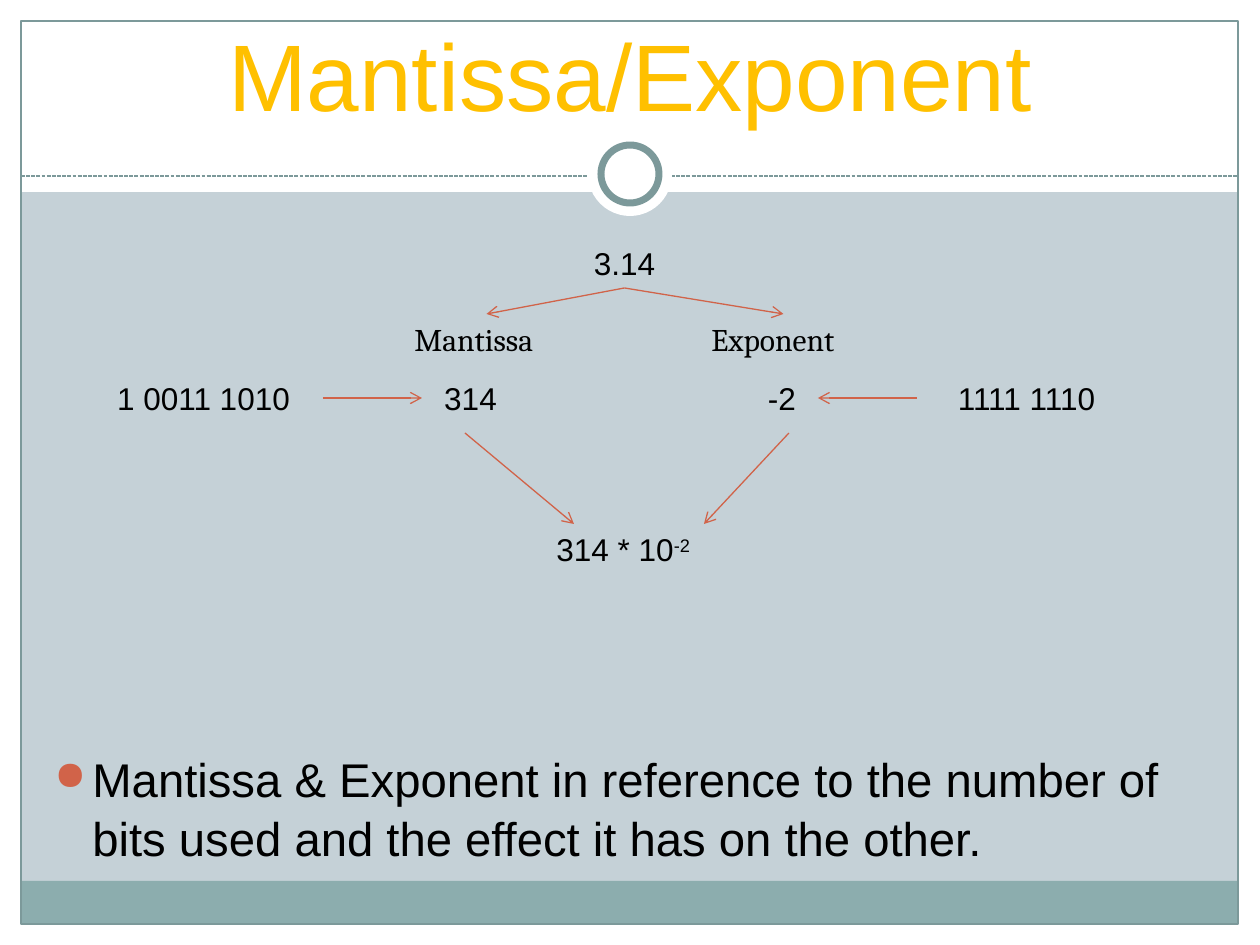
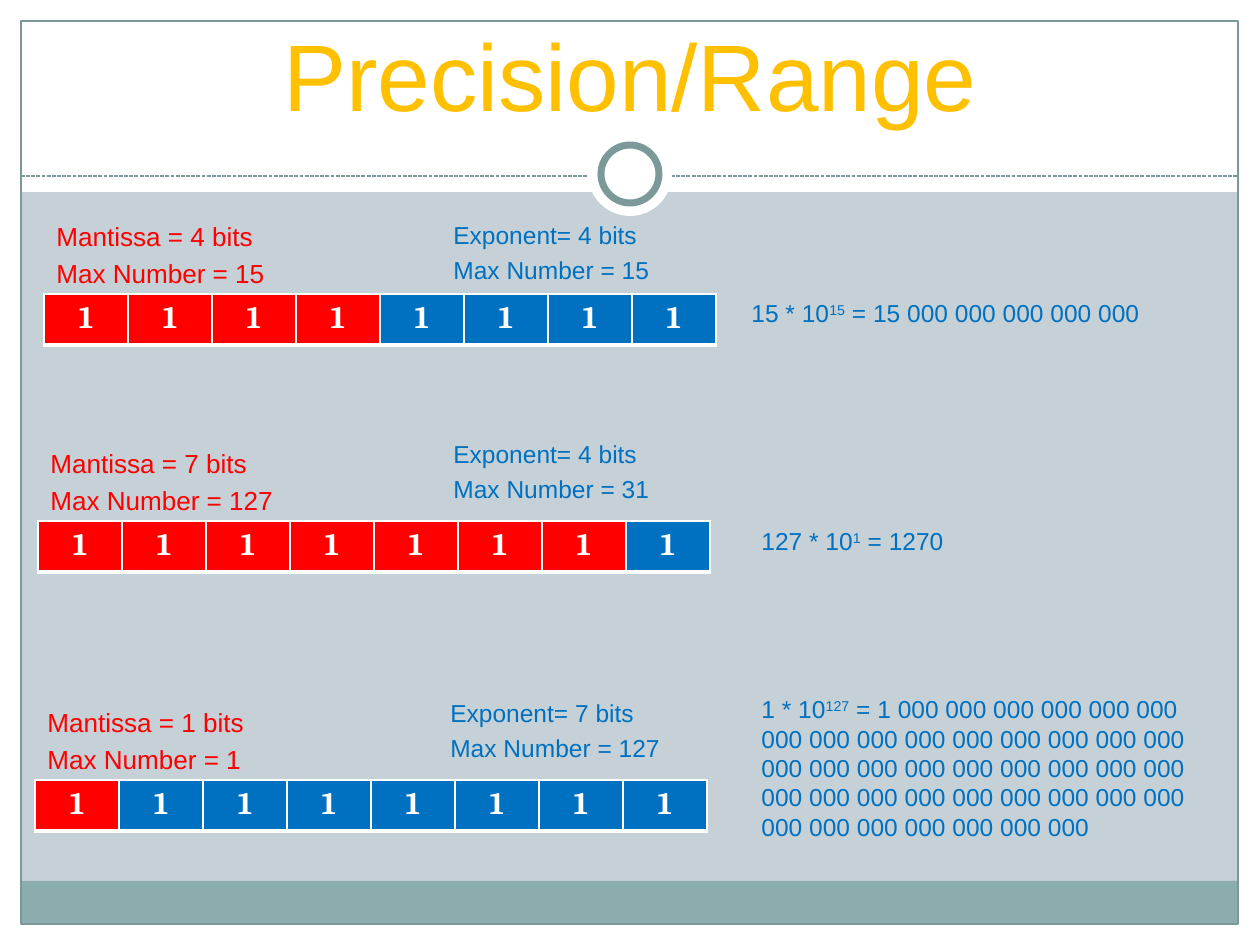
from lxml.etree import SubElement
from pptx import Presentation
from pptx.dml.color import RGBColor
from pptx.enum.dml import MSO_LINE
from pptx.enum.shapes import MSO_CONNECTOR, MSO_SHAPE
from pptx.enum.text import MSO_ANCHOR, MSO_AUTO_SIZE, PP_ALIGN
from pptx.oxml.ns import qn
from pptx.util import Pt

EMU_PER_PX = 7257  # 126 px to the inch

WHITE = RGBColor(0xFF, 0xFF, 0xFF)
BLACK = RGBColor(0, 0, 0)
BACKGROUND = RGBColor(0xC5, 0xD1, 0xD7)
FOOTER_TEAL = RGBColor(0x8C, 0xAD, 0xAE)
FRAME_TEAL = RGBColor(0x7C, 0x99, 0x9A)
TITLE_GOLD = RGBColor(0xFF, 0xC0, 0x00)
ACCENT = RGBColor(0xD1, 0x63, 0x49)
MANTISSA_RED = RGBColor(0xFF, 0, 0)
EXPONENT_BLUE = RGBColor(0, 0x70, 0xC0)

TOP, LEFT, BOTTOM, RIGHT = range(4)


def px(*lengths):
    return [length * EMU_PER_PX for length in lengths]


def set_text(frame, text, size=18, color=BLACK, font="Arial", bold=False,
             align=PP_ALIGN.LEFT, space_before=0):
    """Fill a text frame; each newline starts a paragraph, ^...^ is superscript."""
    frame.word_wrap = True
    for index, line in enumerate(text.split("\n")):
        paragraph = frame.add_paragraph() if index else frame.paragraphs[0]
        paragraph.alignment = align
        paragraph.space_before = Pt(space_before if index else 0)
        for part_index, part in enumerate(line.split("^")):
            if not part:
                continue
            run = paragraph.add_run()
            run.text = part
            run.font.name = font
            run.font.size = Pt(size)
            run.font.bold = bold
            run.font.color.rgb = color
            if part_index % 2:
                run._r.get_or_add_rPr().set("baseline", "30000")


presentation = Presentation()
presentation.slide_width, presentation.slide_height = px(1260, 945)
layout = presentation.slide_layouts[5]
layout.background.fill.solid()
layout.background.fill.fore_color.rgb = BACKGROUND

slides = []
for title_text in ("Mantissa/Exponent", "Precision/Range"):
    slide = presentation.slides.add_slide(layout)
    title = slide.shapes.title
    title.left, title.top, title.width, title.height = px(42, 32, 1176, 105)
    title.text_frame.vertical_anchor = MSO_ANCHOR.BOTTOM
    title.text_frame.auto_size = MSO_AUTO_SIZE.NONE
    set_text(title.text_frame, title_text, size=54, color=TITLE_GOLD, align=PP_ALIGN.CENTER)
    slides.append(slide)
diagram_slide, range_slide = slides

# Shared decoration: drawn once, then moved into the layout
decoration = []
for kind, box, fill, line_width in (
    (MSO_SHAPE.RECTANGLE, (0, 924, 1260, 21), WHITE, 0),
    (MSO_SHAPE.RECTANGLE, (0, 0, 1260, 192), WHITE, 0),
    (MSO_SHAPE.RECTANGLE, (0, 0, 21, 945), WHITE, 0),
    (MSO_SHAPE.RECTANGLE, (1239, 0, 21, 945), WHITE, 0),
    (MSO_SHAPE.RECTANGLE, (21, 881, 1217, 43), FOOTER_TEAL, 0),
    (MSO_SHAPE.RECTANGLE, (21, 21, 1217, 903), None, 0.75),
    (None, (21, 176, 1239, 176), None, 0.75),
    (MSO_SHAPE.OVAL, (588, 132, 84, 84), WHITE, 0),
    (MSO_SHAPE.OVAL, (601, 145, 58, 58), WHITE, 4),
):
    if kind is None:
        shape = diagram_slide.shapes.add_connector(MSO_CONNECTOR.STRAIGHT, *px(*box))
        shape.line.dash_style = MSO_LINE.SQUARE_DOT
    else:
        shape = diagram_slide.shapes.add_shape(kind, *px(*box))
        shape.shadow.inherit = False
        if fill is None:
            shape.fill.background()
        else:
            shape.fill.solid()
            shape.fill.fore_color.rgb = fill
    if line_width:
        shape.line.color.rgb = FRAME_TEAL
        shape.line.width = Pt(line_width)
    else:
        shape.line.fill.background()
    if kind is None:
        SubElement(shape.element.spPr, qn("a:effectLst"))
    decoration.append(shape)

layout_tree = layout.placeholders[0].element.getparent()
for shape in decoration:
    layout_tree.append(shape.element)

# Slide 1: how a number splits into mantissa and exponent
labels = {}
for name, text, left, top, width, font, align in (
    ("mantissa", "Mantissa", 402, 314, 169, "Cambria", PP_ALIGN.LEFT),
    ("exponent", "Exponent", 699, 314, 169, "Cambria", PP_ALIGN.LEFT),
    ("result", "314 * 10^-2^", 544, 524, 219, "Arial", PP_ALIGN.LEFT),
    ("number", "3.14", 515, 238, 219, "Arial", PP_ALIGN.CENTER),
    ("mantissa value", "314", 422, 373, 97, "Arial", PP_ALIGN.CENTER),
    ("exponent value", "-2", 746, 373, 72, "Arial", PP_ALIGN.CENTER),
    ("mantissa bits", "1 0011 1010", 84, 373, 239, "Arial", PP_ALIGN.CENTER),
    ("exponent bits", "1111 1110", 917, 373, 219, "Arial", PP_ALIGN.CENTER),
):
    labels[name] = diagram_slide.shapes.add_textbox(*px(left, top, width, 50))
    set_text(labels[name].text_frame, text, font=font, align=align)

for ends, joins in (
    ((625, 290, 486, 314), (("number", BOTTOM), ("mantissa", TOP))),
    ((625, 290, 784, 314), (("number", BOTTOM), ("exponent", TOP))),
    ((465, 433, 574, 524), None),
    ((789, 433, 704, 524), None),
    ((323, 398, 422, 398), (("mantissa bits", RIGHT), ("mantissa value", LEFT))),
    ((917, 398, 818, 398), (("exponent bits", LEFT), ("exponent value", RIGHT))),
):
    arrow = diagram_slide.shapes.add_connector(MSO_CONNECTOR.STRAIGHT, *px(*ends))
    if joins:
        (start, start_side), (end, end_side) = joins
        arrow.begin_connect(labels[start], start_side)
        arrow.end_connect(labels[end], end_side)
    arrow.line.color.rgb = ACCENT
    arrow.line.width = Pt(0.75)
    properties = arrow.element.spPr
    SubElement(properties.find(qn("a:ln")), qn("a:tailEnd"), type="arrow")
    SubElement(properties, qn("a:effectLst"))

summary = diagram_slide.shapes.add_textbox(*px(42, 741, 1172, 126)).text_frame
set_text(summary, "Mantissa & Exponent in reference to the number of bits used "
                  "and the effect it has on the other.", size=27)
paragraph = summary.paragraphs[0]
paragraph.line_spacing = 1.05
bullet_format = paragraph._p.get_or_add_pPr()
indent = px(38)[0]
bullet_format.set("marL", str(indent))
bullet_format.set("indent", str(-indent))
bullet_color = SubElement(bullet_format, qn("a:buClr"))
SubElement(bullet_color, qn("a:srgbClr"), val=str(ACCENT))
SubElement(bullet_format, qn("a:buSzPct"), val="85000")
SubElement(bullet_format, qn("a:buChar"), char="●")

# Slide 2: three ways to share eight bits
BIT_COUNT = 8
for (left, top, mantissa_bits, mantissa_text, exponent_box, exponent_text,
     value_box, value_text) in (
    (44, 294, 4, "Mantissa = 4 bits\nMax Number = 15",
     (441, 214), "Exponent= 4 bits\nMax Number = 15",
     (739, 292, 486, 43), "15 * 10^15^ = 15 000 000 000 000 000"),
    (38, 521, 7, "Mantissa = 7 bits\nMax Number = 127",
     (441, 433), "Exponent= 4 bits\nMax Number = 31",
     (749, 520, 486, 43), "127 * 10^1^ = 1270"),
    (35, 780, 1, "Mantissa = 1 bits\nMax Number = 1",
     (438, 692), "Exponent= 7 bits\nMax Number = 127",
     (749, 688, 486, 190), "1 * 10^127^ = 1" + " 000" * 40),
):
    for text, box, size, color in (
        (mantissa_text, (left, top - 80, 323, 69), 14.9, MANTISSA_RED),
        (exponent_text, (*exponent_box, 268, 78), 14, EXPONENT_BLUE),
        (value_text, value_box, 14, EXPONENT_BLUE),
    ):
        frame = range_slide.shapes.add_textbox(*px(*box)).text_frame
        set_text(frame, text, size=size, color=color, space_before=3.2)

    table = range_slide.shapes.add_table(
        1, BIT_COUNT, *px(left, top, 84 * BIT_COUNT, 51)).table
    table.first_row = table.horz_banding = False
    for bit in range(BIT_COUNT):
        cell = table.cell(0, bit)
        set_text(cell.text_frame, "1", color=WHITE, font="Cambria", bold=True,
                 align=PP_ALIGN.CENTER)
        cell_format = cell._tc.get_or_add_tcPr()
        for side, width in (("L", 1), ("R", 1), ("T", 1), ("B", 3)):
            border = SubElement(cell_format, qn(f"a:ln{side}"), w=str(Pt(width)))
            border_fill = SubElement(border, qn("a:solidFill"))
            SubElement(border_fill, qn("a:srgbClr"), val=str(WHITE))
        cell.fill.solid()
        cell.fill.fore_color.rgb = MANTISSA_RED if bit < mantissa_bits else EXPONENT_BLUE

presentation.save("out.pptx")
